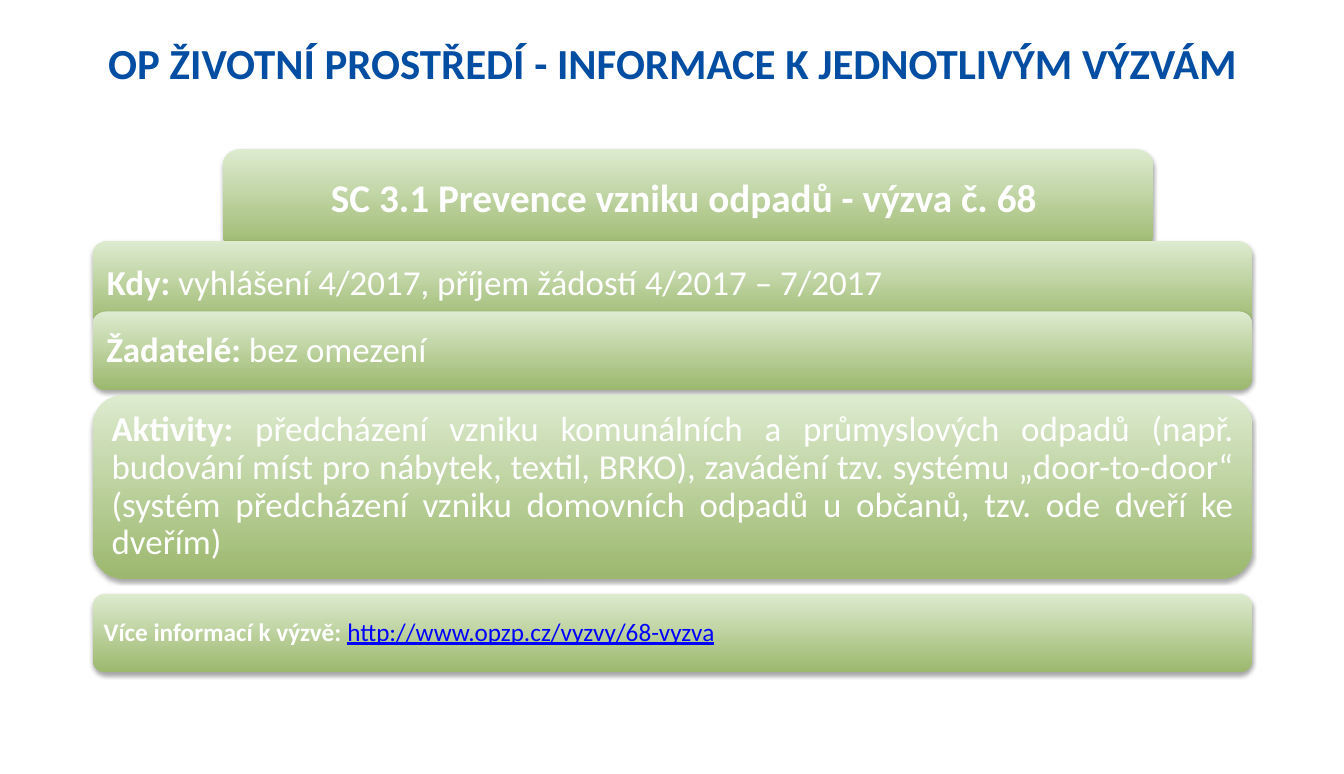
"""Builds the slide on call no. 68, waste prevention."""
from lxml.etree import SubElement
from pptx import Presentation
from pptx.dml.color import RGBColor
from pptx.enum.shapes import MSO_SHAPE
from pptx.enum.text import MSO_ANCHOR, PP_ALIGN as ALIGN
from pptx.oxml.ns import qn
from pptx.util import Inches, Pt

BLUE = RGBColor(0x03, 0x4E, 0xA2)
LINK = RGBColor(0x00, 0x00, 0xFF)
WHITE = RGBColor(0xFF, 0xFF, 0xFF)
PALE_GREEN = RGBColor(0xDD, 0xEB, 0xCF)
GREEN = RGBColor(0x9C, 0xB8, 0x6E)

BAND_LEFT, BAND_WIDTH = 0.92, 11.5


def add_run(paragraph, text, size, color, bold):
    run = paragraph.add_run()
    run.text = text
    run.font.name = "Calibri"
    run.font.size = Pt(size)
    run.font.color.rgb = color
    run.font.bold = bold
    return run


def add_shadow(band):
    band.shadow.inherit = False
    effects = band._element.spPr.find(qn("a:effectLst"))
    shadow = SubElement(effects, qn("a:outerShdw"), blurRad=str(Pt(3.1)),
                        dist=str(Pt(1.8)), dir="5400000", rotWithShape="0")
    color = SubElement(shadow, qn("a:srgbClr"), val="000000")
    SubElement(color, qn("a:alpha"), val="35000")


prs = Presentation()
prs.slide_width, prs.slide_height = Inches(13.33), Inches(7.68)
slide = prs.slides.add_slide(prs.slide_layouts[6])

title = slide.shapes.add_textbox(Inches(0.67), Inches(0.31), Inches(12), Inches(1.01))
title.text_frame.word_wrap = True
heading = title.text_frame.paragraphs[0]
heading.alignment = ALIGN.CENTER
add_run(heading, "OP ŽIVOTNÍ PROSTŘEDÍ - INFORMACE K JEDNOTLIVÝM VÝZVÁM", 30.6, BLUE, True)

bands = [
    (2.21, 1.48, 9.23, 1.01, 0.12, ALIGN.CENTER, 28,
     "SC 3.1 Prevence vzniku odpadů - výzva č. 68 ", ""),
    (BAND_LEFT, 2.39, BAND_WIDTH, 0.85, 0.1, ALIGN.LEFT, 25,
     "Kdy: ", "vyhlášení 4/2017, příjem žádostí 4/2017 – 7/2017"),
    (BAND_LEFT, 3.09, BAND_WIDTH, 0.78, 0.1, ALIGN.LEFT, 25,
     "Žadatelé: ", "bez omezení"),
    (BAND_LEFT, 3.92, BAND_WIDTH, 1.82, 0.1, ALIGN.JUSTIFY, 25,
     "Aktivity: ",
     "předcházení vzniku komunálních a průmyslových odpadů (např. budování míst "
     "pro nábytek, textil, BRKO), zavádění tzv. systému „door-to-door“ (systém "
     "předcházení vzniku domovních odpadů u občanů, tzv. ode dveří ke dveřím)"),
    (BAND_LEFT, 5.89, BAND_WIDTH, 0.78, 0.07, ALIGN.LEFT, 18,
     "Více informací k výzvě: ", "http://www.opzp.cz/vyzvy/68-vyzva"),
]

for left, top, width, height, inset, alignment, size, label, detail in bands:
    band = slide.shapes.add_shape(MSO_SHAPE.ROUNDED_RECTANGLE, Inches(left),
                                  Inches(top), Inches(width), Inches(height))
    band.fill.gradient()
    band.fill.gradient_angle = 270
    for stop, color in zip(band.fill.gradient_stops, (PALE_GREEN, GREEN)):
        stop.color.rgb = color
    band.line.fill.background()
    add_shadow(band)

    frame = band.text_frame
    frame.word_wrap = True
    frame.vertical_anchor = MSO_ANCHOR.MIDDLE
    frame.margin_left = frame.margin_right = Inches(inset)
    frame.margin_top = frame.margin_bottom = Inches(inset)
    paragraph = frame.paragraphs[0]
    paragraph.alignment = alignment
    paragraph.line_spacing = 0.9
    add_run(paragraph, label, size, WHITE, True)
    if detail:
        is_link = detail.startswith("http")
        run = add_run(paragraph, detail, size, LINK if is_link else WHITE, False)
        run.font.underline = is_link

prs.save("out.pptx")
